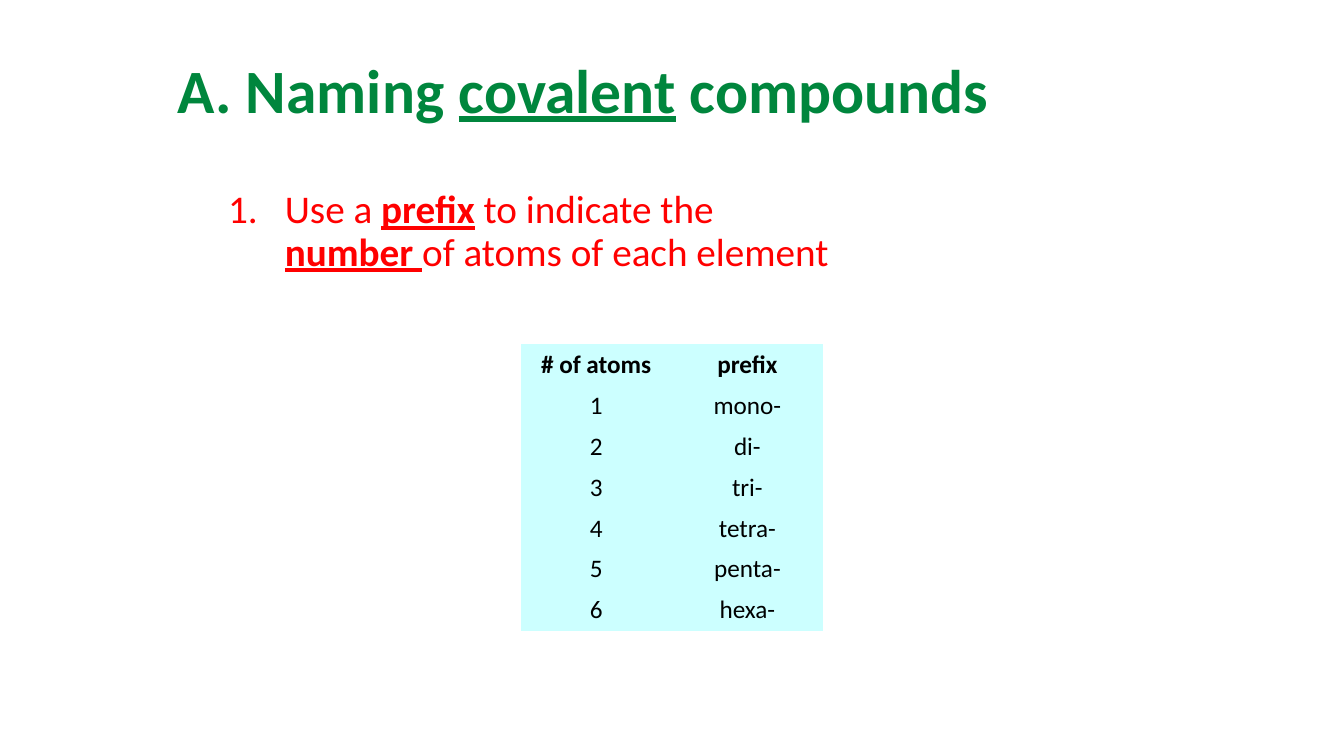
from dataclasses import dataclass

from lxml.etree import SubElement as Sub
from pptx import Presentation
from pptx.dml.color import RGBColor as RGB
from pptx.enum.text import MSO_ANCHOR as Anchor, MSO_AUTO_SIZE as Fit, PP_ALIGN as Align
from pptx.oxml.ns import qn
from pptx.util import Cm, Pt

TITLE = [("A. Naming ", False), ("covalent", True), (" compounds", False)]
RULE = [
    ("Use a ", False),
    ("prefix", True),
    (" to indicate the ", False),
    ("number ", True),
    ("of atoms of each element", False),
]
ROWS = [
    ("# of atoms", "prefix"),
    ("1", "mono-"),
    ("2", "di-"),
    ("3", "tri-"),
    ("4", "tetra-"),
    ("5", "penta-"),
    ("6", "hexa-"),
]


@dataclass(frozen=True)
class Theme:
    face: str = "Calibri"
    green: str = "00863D"
    red: str = "FF0000"
    black: str = "000000"
    cyan: str = "CCFFFF"
    head: int = 44
    body: int = 28
    cell: int = 18
    plain: str = "{2D5ABB26-0587-4C30-8999-92F81FD0307C}"


LOOK = Theme()


def style(para, size, color, bold=None):
    font = para.font
    font.name, font.size, font.bold = LOOK.face, Pt(size), bold
    font.color.rgb = RGB.from_string(color)


def write(para, parts, bold):
    para.alignment, para.line_spacing = Align.LEFT, 0.9
    for text, key in parts:
        run = para.add_run()
        run.text = text
        if key:
            run.font.underline = True
            run.font.bold = bold


def add_title(slide):
    box = slide.shapes.title
    box.left, box.top, box.width, box.height = Cm(4.23), Cm(0.76), Cm(25.4), Cm(3.18)
    frame = box.text_frame
    frame.vertical_anchor, frame.auto_size = Anchor.MIDDLE, Fit.NONE
    para = frame.paragraphs[0]
    write(para, TITLE, True)
    style(para, LOOK.head, LOOK.green, True)


def add_rule(slide):
    box = slide.shapes.add_textbox(Cm(5.5), Cm(4.66), Cm(15.88), Cm(13.76))
    frame = box.text_frame
    frame.word_wrap = True
    para = frame.paragraphs[0]
    write(para, RULE, True)
    style(para, LOOK.body, LOOK.red)
    para.space_before = Pt(10)
    props = para._p.get_or_add_pPr()
    dent = Cm(1.43)
    props.set("marL", str(dent))
    props.set("indent", str(-dent))
    mark = Sub(props, qn("a:buAutoNum"), type="arabicPeriod")
    props.find(qn("a:defRPr")).addprevious(mark)


def add_grid(slide):
    wide, high = Cm(3.81), Cm(1.03)
    count = len(ROWS)
    frame = slide.shapes.add_table(
        count, 2, Cm(13.12), Cm(8.68), wide * 2, high * count
    )
    table = frame.table
    table.first_row = table.horz_banding = False
    table._tbl.tblPr.find(qn("a:tableStyleId")).text = LOOK.plain
    for i, row in enumerate(ROWS):
        for j, text in enumerate(row):
            cell = table.cell(i, j)
            cell.text = text
            cell.vertical_anchor = Anchor.MIDDLE
            cell.fill.solid()
            cell.fill.fore_color.rgb = RGB.from_string(LOOK.cyan)
            para = cell.text_frame.paragraphs[0]
            para.alignment = Align.CENTER
            style(para, LOOK.cell, LOOK.black, i == 0)


def main():
    deck = Presentation()
    deck.slide_width, deck.slide_height = Cm(33.87), Cm(19.05)
    slide = deck.slides.add_slide(deck.slide_layouts[5])
    add_title(slide)
    add_rule(slide)
    add_grid(slide)
    deck.save("out.pptx")


if __name__ == "__main__":
    main()
